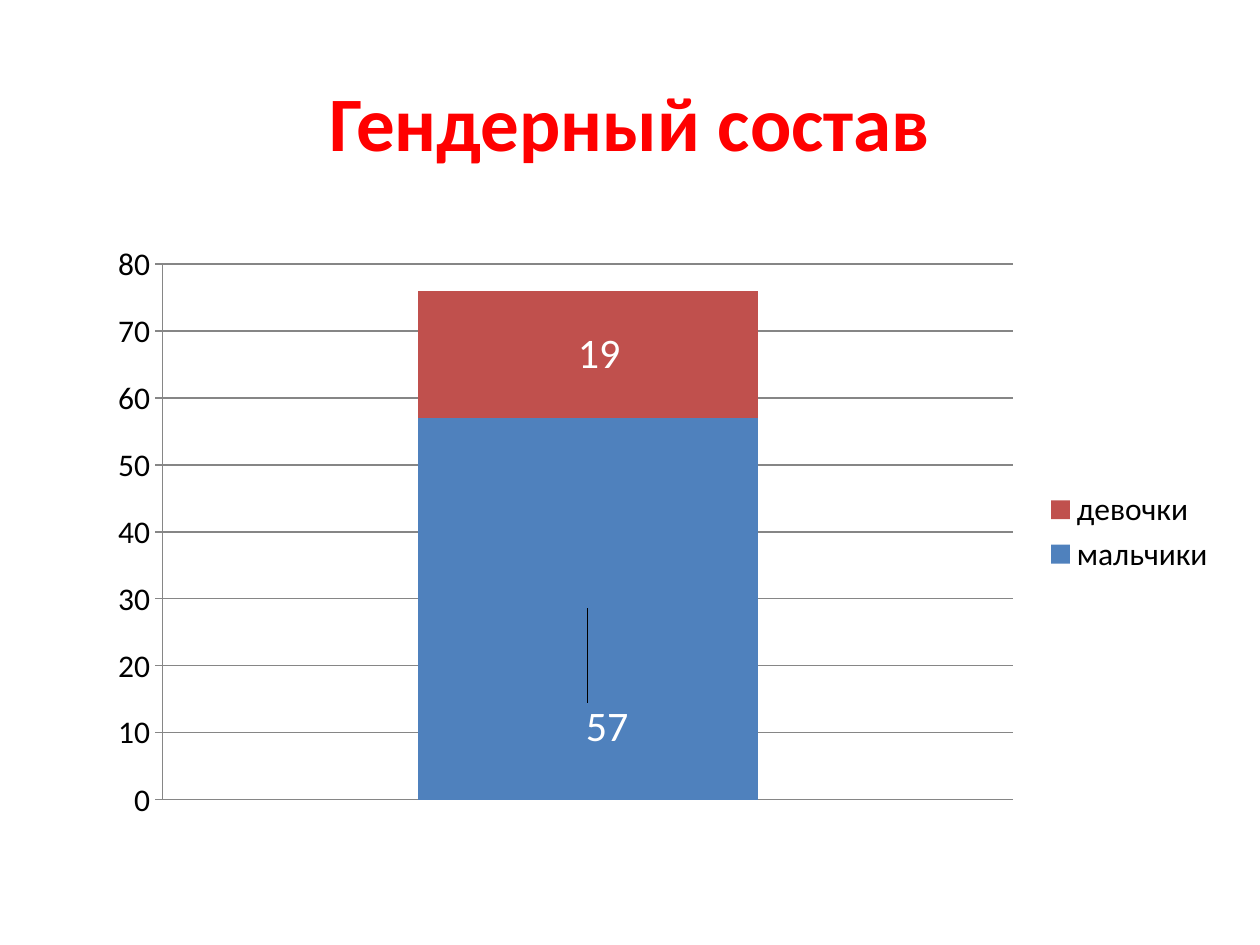
"""Build a slide with a stacked column chart of boys and girls."""
from pptx import Presentation
from pptx.chart.data import CategoryChartData
from pptx.dml.color import RGBColor
from pptx.enum.chart import XL_CHART_TYPE as ChartType
from pptx.enum.chart import XL_LABEL_POSITION as LabelPosition
from pptx.enum.chart import XL_LEGEND_POSITION as LegendPosition
from pptx.enum.chart import XL_TICK_MARK as TickMark
from pptx.enum.text import MSO_ANCHOR as Anchor
from pptx.enum.text import PP_ALIGN as Align
from pptx.oxml import parse_xml
from pptx.oxml.ns import nsdecls
from pptx.util import Inches, Pt


def style(font, size, color, bold=False):
    font.name, font.size, font.bold = "Calibri", Pt(size), bold
    font.color.rgb = RGBColor.from_string(color)


def manual_layout(**parts):
    values = "".join(f'<c:{key} val="{value}"/>' for key, value in parts.items())
    return parse_xml(
        f'<c:layout {nsdecls("c")}><c:manualLayout>{values}</c:manualLayout></c:layout>')


deck = Presentation()
deck.slide_width, deck.slide_height = Inches(10), Inches(7.5)
width, height = deck.slide_width, deck.slide_height
slide = deck.slides.add_slide(deck.slide_layouts[6])

heading = slide.shapes.add_textbox(
    int(width * 0.05), int(height * 0.04), int(width * 0.9), int(height * 0.176)).text_frame
heading.word_wrap = True
heading.vertical_anchor = Anchor.MIDDLE
line = heading.paragraphs[0]
line.alignment = Align.CENTER
words = line.add_run()
words.text = "Гендерный состав"
style(words.font, 44, "FF0000", bold=True)

groups = [
    ("мальчики", 57, "4F81BD", 0.017, 0.2),
    ("девочки", 19, "C0504D", 0.01, 0),
]
counts = CategoryChartData(number_format="0")
counts.categories = ["1"]
for name, count, *_ in groups:
    counts.add_series(name, [count])
chart = slide.shapes.add_chart(
    ChartType.COLUMN_STACKED, int(width * 0.075), int(height * 0.248),
    int(width * 0.9), int(height * 0.63), counts).chart
style(chart.font, 18, "000000")
chart.has_title = False
chart.has_legend = True
chart.legend.position = LegendPosition.RIGHT
chart.legend.include_in_layout = False

chart.category_axis.visible = False
scale = chart.value_axis
scale.minimum_scale, scale.maximum_scale, scale.major_unit = 0, 80, 10
scale.major_tick_mark = TickMark.CROSS
scale.minor_tick_mark = TickMark.NONE
scale.tick_labels.number_format = "0"
scale.tick_labels.number_format_is_linked = False
scale.has_major_gridlines = True
for rule in (scale.format.line, scale.major_gridlines.format.line):
    rule.width = Pt(0.75)
    rule.color.rgb = RGBColor.from_string("868686")

plot = chart.plots[0]
plot.gap_width, plot.overlap, plot.vary_by_categories = 150, 100, False
for series, (_, _, color, shift_x, shift_y) in zip(plot.series, groups):
    series.format.fill.solid()
    series.format.fill.fore_color.rgb = RGBColor.from_string(color)
    series.data_labels.show_value = True
    series.data_labels.number_format = "0"
    series.data_labels.number_format_is_linked = False
    style(series.data_labels.font, 24, "FFFFFF")
    count_label = series.points[0].data_label
    count_label.position = LabelPosition.CENTER
    style(count_label.font, 24, "FFFFFF")
    label_index = series._element.xpath(".//c:dLbl/c:idx")[0]
    label_index.addnext(manual_layout(x=shift_x, y=shift_y))

plot_area = chart._chartSpace.chart.plotArea
for automatic in plot_area.xpath("c:layout"):
    plot_area.remove(automatic)
plot_area.insert(0, manual_layout(
    layoutTarget="inner", xMode="edge", yMode="edge", x=0.06, y=0.05, w=0.75, h=0.9))

deck.save("out.pptx")
